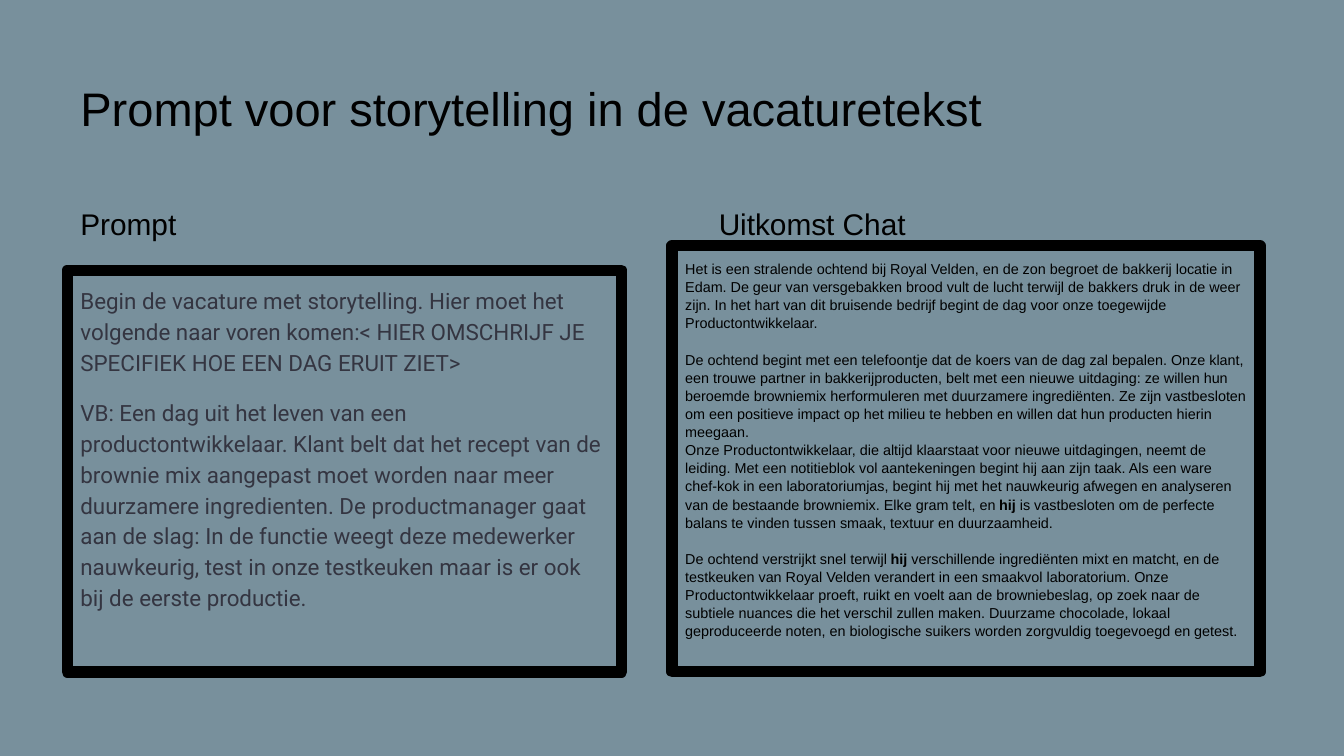
"""Build a slide that sets a storytelling prompt beside the chat result."""
from lxml.etree import SubElement
from pptx import Presentation
from pptx.dml.color import RGBColor as Color
from pptx.enum.lang import MSO_LANGUAGE_ID as Language
from pptx.enum.shapes import MSO_SHAPE as Shape
from pptx.enum.text import MSO_ANCHOR as Anchor, PP_ALIGN as Align
from pptx.oxml.ns import qn
from pptx.util import Inches, Pt

TITLE = "Prompt voor storytelling in de vacaturetekst"
PROMPT = [
    ["Begin de vacature met storytelling. Hier moet het volgende naar voren komen:"
     "< HIER OMSCHRIJF JE SPECIFIEK HOE EEN DAG ERUIT ZIET>"],
    ["VB: Een dag uit het leven van een productontwikkelaar. Klant belt dat het recept "
     "van de brownie mix aangepast moet worden naar meer duurzamere ingredienten. De "
     "productmanager gaat aan de slag: In de functie weegt deze medewerker nauwkeurig, "
     "test in onze testkeuken maar is er ook bij de eerste productie."],
]
RESULT = [
    ["Het is een stralende ochtend bij Royal Velden, en de zon begroet de bakkerij "
     "locatie in Edam. De geur van versgebakken brood vult de lucht terwijl de bakkers "
     "druk in de weer zijn. In het hart van dit bruisende bedrijf begint de dag voor "
     "onze toegewijde Productontwikkelaar."],
    ["De ochtend begint met een telefoontje dat de koers van de dag zal bepalen. Onze "
     "klant, een trouwe partner in bakkerijproducten, belt met een nieuwe uitdaging: ze "
     "willen hun beroemde browniemix herformuleren met duurzamere ingrediënten. Ze zijn "
     "vastbesloten om een positieve impact op het milieu te hebben en willen dat hun "
     "producten hierin meegaan."],
    ["Onze Productontwikkelaar, die altijd klaarstaat voor nieuwe uitdagingen, neemt de "
     "leiding. Met een notitieblok vol aantekeningen begint hij aan zijn taak. Als een "
     "ware chef-kok in een laboratoriumjas, begint hij met het nauwkeurig afwegen en "
     "analyseren van de bestaande browniemix. Elke gram telt, en ",
     "hij ",
     "is vastbesloten om de perfecte balans te vinden tussen smaak, textuur en "
     "duurzaamheid."],
    ["De ochtend verstrijkt snel terwijl",
     " hij ",
     "verschillende ingrediënten mixt en matcht, en de testkeuken van Royal Velden "
     "verandert in een smaakvol laboratorium. Onze Productontwikkelaar proeft, ruikt en "
     "voelt aan de browniebeslag, op zoek naar de subtiele nuances die het verschil "
     "zullen maken. Duurzame chocolade, lokaal geproduceerde noten, en biologische "
     "suikers worden zorgvuldig toegevoegd en getest."],
]

THEME = {
    "back": Color.from_string("78909C"),
    "ink": Color.from_string("000000"),
    "title": {"name": "Arial", "size": Pt(25.2), "color": "000000"},
    "heading": {"name": "Arial", "size": Pt(16), "color": "000000"},
    "prompt": {"name": "Roboto", "size": Pt(12), "color": "343541"},
    "result": {"name": "Arial", "size": Pt(7.7), "color": "000000"},
    "border": Pt(6),
}
PROMPT_GAPS = [0, 10]
RESULT_GAPS = [0, 9.8, 0, 9.8]
WIDTH = 10
HEIGHT = WIDTH * 9 / 16
MARGIN, BOTTOM, HEAD_TOP, HEAD_HEIGHT = 0.5, 5, 1.27, 0.63
COLUMN = 33 / 8
RIGHT, RESULT_LEFT = 5.25, 5


def apply(target, values):
    for name, value in values.items():
        setattr(target, name, value)


def write(box, paragraphs, style, anchor, spacing=1.0, gaps=(0,)):
    frame = box.text_frame
    inset = Inches(0.1)
    apply(frame, {"word_wrap": True, "vertical_anchor": anchor,
                  "margin_left": inset, "margin_right": inset,
                  "margin_top": inset, "margin_bottom": inset})
    for index, (parts, gap) in enumerate(zip(paragraphs, gaps)):
        para = frame.add_paragraph() if index else frame.paragraphs[0]
        apply(para, {"alignment": Align.LEFT, "line_spacing": spacing,
                     "space_before": Pt(gap), "space_after": Pt(0)})
        for number, text in enumerate(parts):
            span = para.add_run()
            span.text = text
            apply(span.font, {"name": THEME[style]["name"], "size": THEME[style]["size"],
                              "bold": number % 2 == 1, "language_id": Language.DUTCH})
            span.font.color.rgb = Color.from_string(THEME[style]["color"])


def add_label(page, place, text, style, anchor):
    box = page.shapes.add_textbox(*map(Inches, place))
    write(box, [[text]], style, anchor)


def add_panel(page, left, top, width, paragraphs, style, spacing, gaps, filled):
    place = map(Inches, (left, top, width, BOTTOM - top))
    box = page.shapes.add_shape(Shape.RECTANGLE, *place)
    box.shadow.inherit = False
    if filled:
        box.fill.solid()
        box.fill.fore_color.rgb = THEME["back"]
    else:
        box.fill.background()
    box.line.color.rgb = THEME["ink"]
    box.line.width = THEME["border"]
    SubElement(box.line._get_or_add_ln(), qn("a:round"))
    write(box, paragraphs, style, Anchor.TOP, spacing, gaps)


def main():
    deck = Presentation()
    apply(deck, {"slide_width": Inches(WIDTH), "slide_height": Inches(HEIGHT)})
    page = deck.slides.add_slide(deck.slide_layouts[6])
    page.background.fill.solid()
    page.background.fill.fore_color.rgb = THEME["back"]

    add_label(page, (MARGIN, 0.49, WIDTH - 2 * MARGIN, 0.63), TITLE, "title",
              Anchor.MIDDLE)
    add_panel(page, MARGIN, 2.01, COLUMN, PROMPT, "prompt", 1.15, PROMPT_GAPS, True)
    add_panel(page, RESULT_LEFT, 1.83, RIGHT + COLUMN - RESULT_LEFT, RESULT, "result",
              1.05, RESULT_GAPS, False)
    for left, heading in ((MARGIN, "Prompt"), (RIGHT, "Uitkomst Chat")):
        add_label(page, (left, HEAD_TOP, COLUMN, HEAD_HEIGHT), heading, "heading",
                  Anchor.BOTTOM)
    deck.save("out.pptx")


if __name__ == "__main__":
    main()
